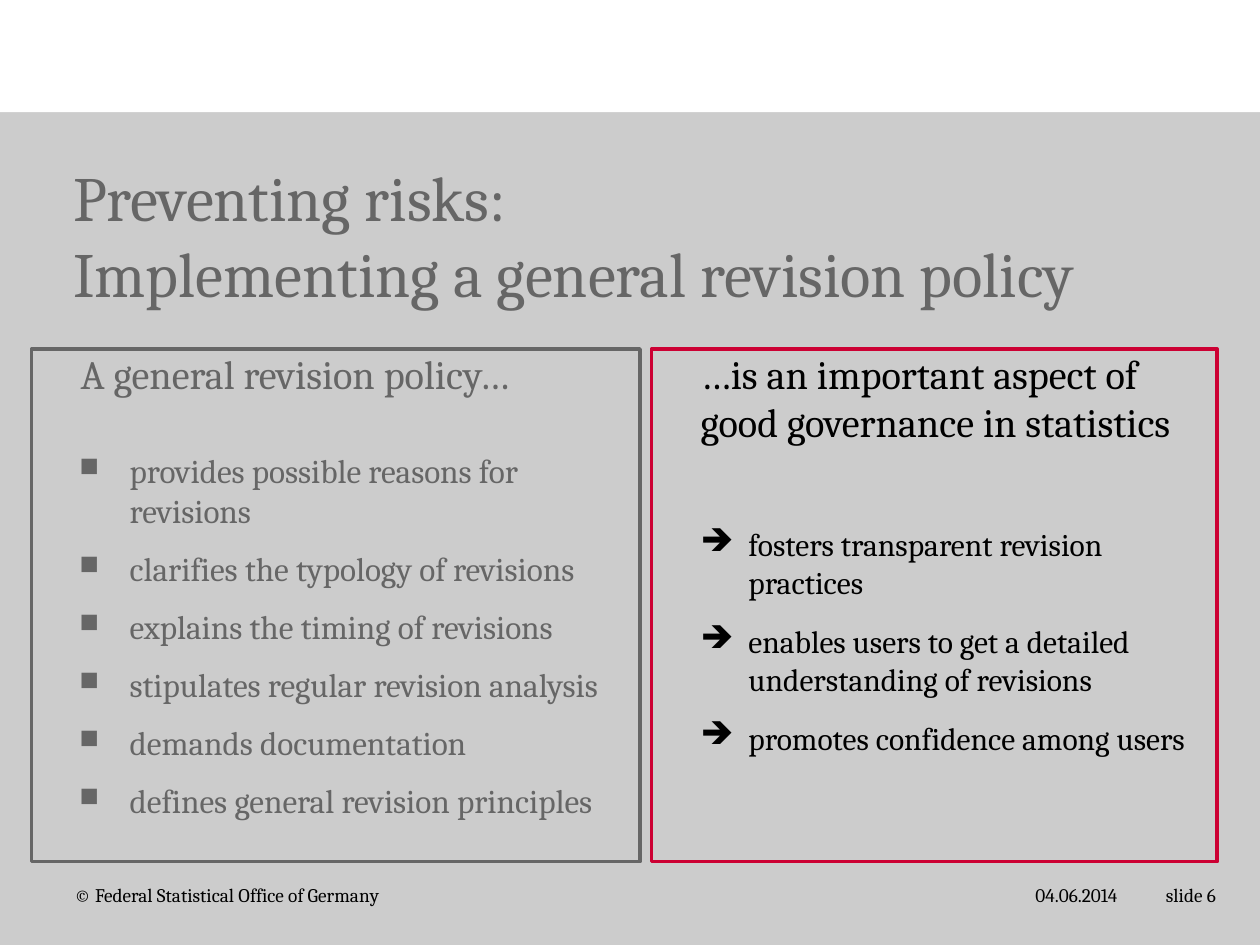
from lxml.etree import SubElement
from pptx import Presentation
from pptx.dml.color import RGBColor
from pptx.enum.shapes import MSO_SHAPE as Shape
from pptx.enum.text import MSO_ANCHOR as Anchor, PP_ALIGN as Align
from pptx.oxml.ns import qn
from pptx.util import Inches, Pt

GREY, BLACK, RED = "666666", "000000", "CC0033"
FONT = "Cambria"

deck = Presentation()
deck.slide_width, deck.slide_height = Inches(10), Inches(7.5)
slide = deck.slides.add_slide(deck.slide_layouts[6])
rgb = RGBColor.from_string
slide.background.fill.solid()
slide.background.fill.fore_color.rgb = rgb("CCCCCC")


def add_area(left, top, width, height, outlined=True, anchor=Anchor.TOP):
    """Add a rectangle or text box without margins, placed in percent of the slide."""
    across, down = deck.slide_width / 100, deck.slide_height / 100
    place = [int(v) for v in (left * across, top * down, width * across, height * down)]
    if outlined:
        area = slide.shapes.add_shape(Shape.RECTANGLE, *place)
        area.shadow.inherit = False
        area.fill.background()
    else:
        area = slide.shapes.add_textbox(*place)
    frame = area.text_frame
    frame.word_wrap = True
    frame.vertical_anchor = anchor
    frame.margin_left = frame.margin_top = frame.margin_right = frame.margin_bottom = 0
    return area


def write(paragraph, text, size, color, align=Align.LEFT):
    paragraph.alignment = align
    for number, line in enumerate(text.split("\n")):
        if number:
            paragraph.add_line_break()
        run = paragraph.add_run()
        run.text = line
        run.font.name, run.font.size = FONT, Pt(size)
        run.font.color.rgb = rgb(color)


# Header band and title
band = add_area(0, 0, 100, 11.87)
band.fill.solid()
band.fill.fore_color.rgb = rgb("FFFFFF")
band.line.fill.background()

title = add_area(5.8, 16.8, 90.6, 13.6, outlined=False)
write(title.text_frame.paragraphs[0],
      "Preventing risks:\nImplementing a general revision policy", 36, GREY)

# Footer
for text, left, width, align in [
    ("© Federal Statistical Office of Germany", 5.9, 45.8, Align.LEFT),
    ("04.06.2014", 78, 10.7, Align.RIGHT),
    ("slide 6", 89.4, 7.1, Align.RIGHT),
]:
    note = add_area(left, 92, width, 3.87, outlined=False, anchor=Anchor.BOTTOM)
    write(note.text_frame.paragraphs[0], text, 11, BLACK, align)

# Two framed columns: a heading followed by bulleted points
columns = [
    dict(left=2.5, width=48.3, frame=GREY, ink=GREY, size=19, before=4.3,
         bullet="■", scale=80, indent=0.78, hang=0.4, gap=26,
         heading="A general revision policy…",
         points=["provides possible reasons for revisions",
                 "clarifies the typology of revisions",
                 "explains the timing of revisions",
                 "stipulates regular revision analysis",
                 "demands documentation",
                 "defines general revision principles"]),
    dict(left=51.7, width=44.9, frame=RED, ink=BLACK, size=18, before=6,
         bullet="➔", scale=100, indent=0.77, hang=0.38, gap=39.6,
         heading="…is an important aspect of good governance in statistics",
         points=["fosters transparent revision practices",
                 "enables users to get a detailed understanding of revisions",
                 "promotes confidence among users"]),
]
for column in columns:
    box = add_area(column["left"], 36.93, column["width"], 54.27)
    box.line.color.rgb = rgb(column["frame"])
    box.line.width = Pt(2)

    heading = box.text_frame.paragraphs[0]
    heading.space_after = Pt(column["gap"])
    heading._p.get_or_add_pPr().set("marL", str(Inches(0.39)))
    write(heading, column["heading"], 23, column["ink"])

    for point in column["points"]:
        item = box.text_frame.add_paragraph()
        item.space_before, item.space_after = Pt(column["before"]), Pt(6)
        props = item._p.get_or_add_pPr()
        props.set("marL", str(Inches(column["indent"])))
        props.set("indent", str(-Inches(column["hang"])))
        bullet_color = SubElement(props, qn("a:buClr"))
        SubElement(bullet_color, qn("a:srgbClr"), val=column["ink"])
        SubElement(props, qn("a:buSzPct"), val=str(column["scale"] * 1000))
        SubElement(props, qn("a:buChar"), char=column["bullet"])
        write(item, point, column["size"], column["ink"])

deck.save("out.pptx")
